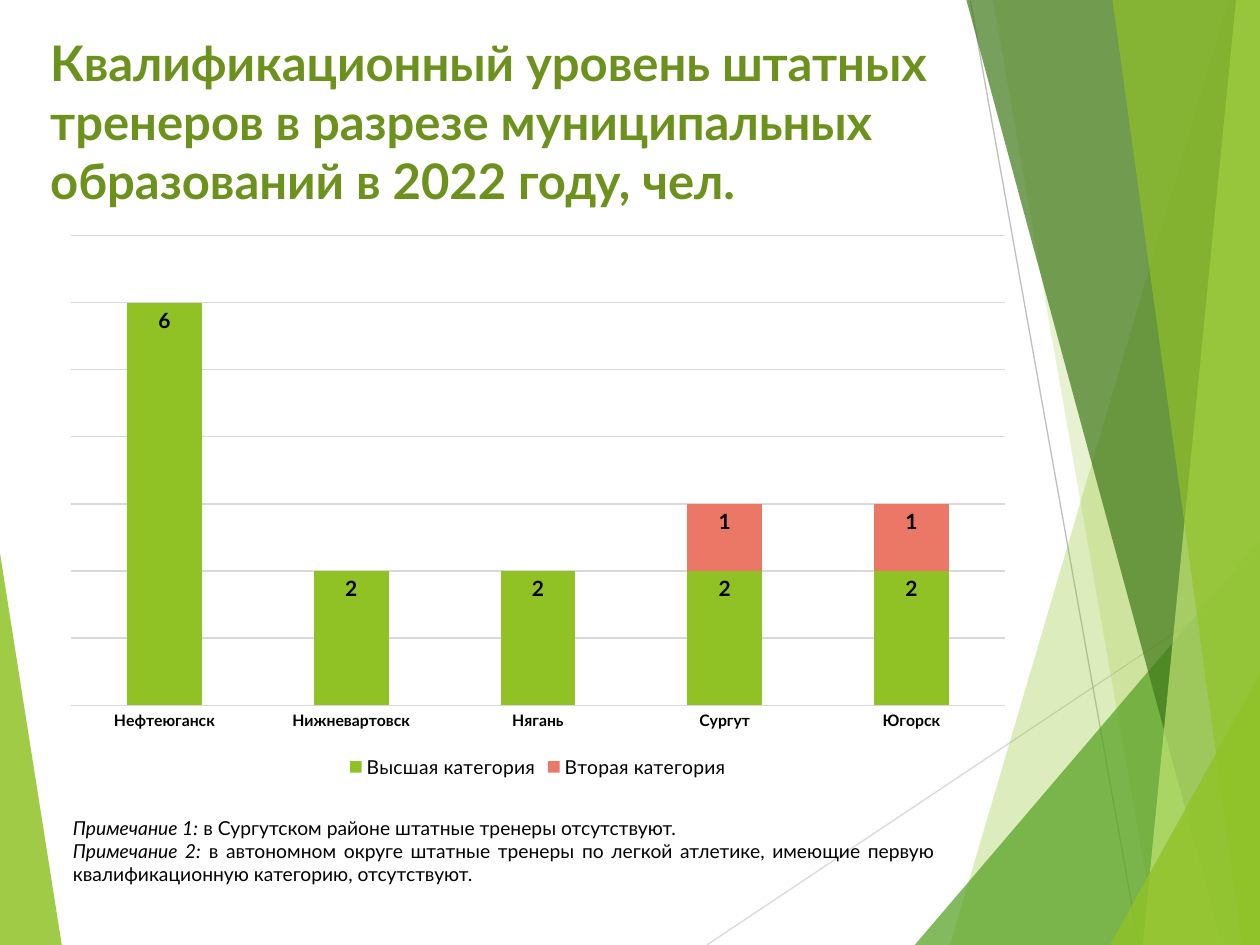
from dataclasses import dataclass

import pptx
import pptx.chart.data
import pptx.dml.color
import pptx.enum.chart
import pptx.enum.shapes
import pptx.enum.text
import pptx.oxml
import pptx.oxml.ns
import pptx.util

# The slide is a grid of 100 columns by 75 rows
COLUMNS, ROWS = 100, 75
CELL = pptx.util.Inches(0.1)


@dataclass(frozen=True)
class Theme:
    font: str = "Lato"
    title: str = "6C921D"
    text: str = "000000"
    lime: str = "90C226"
    green: str = "54A021"
    forest: str = "3F7819"
    pale: str = "C0E474"
    coral: str = "EB7766"
    light_gray: str = "D9D9D9"
    gray: str = "BFBFBF"
    hairline: float = 0.75
    title_size: int = 28
    chart_size: int = 10
    city_size: int = 9
    label_size: int = 12
    small_size: int = 11


@dataclass(frozen=True)
class Facet:
    corners: tuple[tuple[float, float], ...]
    color: str
    opacity: int


@dataclass(frozen=True)
class Ray:
    start: tuple[float, float]
    end: tuple[float, float]
    color: str


@dataclass(frozen=True)
class Box:
    column: float
    row: float
    width: float
    height: float

    def emu(self) -> tuple[int, ...]:
        return tuple(grid(v) for v in (self.column, self.row, self.width, self.height))


@dataclass(frozen=True)
class Category:
    name: str
    counts: tuple
    color: str


THEME = Theme()

LEFT_WEDGE = Facet(((0, 43.9), (4.9, ROWS), (0, ROWS)), THEME.lime, 85)
RAYS = (
    Ray((56.1, ROWS), (COLUMNS, 45.7), THEME.light_gray),
    Ray((77, 0), (90.4, ROWS), THEME.gray),
)


def right_facet(top: tuple[float, float], bottom: float, color: str, opacity: int) -> Facet:
    """A facet that fills everything from its slanted side to the right edge."""
    corners = (top, (bottom, ROWS), (COLUMNS, ROWS), (COLUMNS, top[1]))
    return Facet(corners, color, opacity)


RIGHT_FACETS = (
    right_facet((97.5, 0), 75.4, THEME.lime, 30),
    right_facet((78.8, 0), 91.9, THEME.lime, 20),
    right_facet((COLUMNS, 42.9), 72.6, THEME.green, 72),
    right_facet((76.7, 0), 97, THEME.forest, 70),
    right_facet((98.1, 0), 90.7, THEME.pale, 70),
    right_facet((88.3, 0), 98.6, THEME.lime, 65),
    right_facet((COLUMNS, 53.5), 88.1, THEME.lime, 80),
)

TITLE = "Квалификационный уровень штатных тренеров в разрезе муниципальных образований в 2022 году, чел."
CITIES = ("Нефтеюганск", "Нижневартовск", "Нягань", "Сургут", "Югорск")
CATEGORIES = (
    Category("Высшая категория", (6, 2, 2, 2, 2), THEME.lime),
    Category("Вторая категория", (None, None, None, 1, 1), THEME.coral),
)
NOTES = (
    ("Примечание 1:", " в Сургутском районе штатные тренеры отсутствуют."),
    ("Примечание 2:", " в автономном округе штатные тренеры по легкой атлетике, "
                      "имеющие первую квалификационную категорию, отсутствуют."),
)


def grid(cells: float) -> int:
    return round(cells * CELL)


def rgb(color: str) -> pptx.dml.color.RGBColor:
    return pptx.dml.color.RGBColor.from_string(color)


def style_font(font, size: float, color: str = THEME.text, bold: bool = False) -> None:
    font.name = THEME.font
    font.size = pptx.util.Pt(size)
    font.bold = bold
    font.color.rgb = rgb(color)


def style_line(line, color: str) -> None:
    line.color.rgb = rgb(color)
    line.width = pptx.util.Pt(THEME.hairline)


def draw_facet(slide, facet: Facet) -> None:
    first, *rest = [(grid(x), grid(y)) for x, y in facet.corners]
    builder = slide.shapes.build_freeform(*first)
    builder.add_line_segments(rest, close=True)
    shape = builder.convert_to_shape()
    shape.shadow.inherit = False
    shape.line.fill.background()
    shape.fill.solid()
    shape.fill.fore_color.rgb = rgb(facet.color)
    color = shape.fill._xPr.find(".//" + pptx.oxml.ns.qn("a:srgbClr"))
    alpha = pptx.oxml.parse_xml(
        f'<a:alpha {pptx.oxml.ns.nsdecls("a")} val="{facet.opacity * 1000}"/>')
    color.append(alpha)


def draw_ray(slide, ray: Ray) -> None:
    ends = [grid(v) for v in ray.start + ray.end]
    connector = slide.shapes.add_connector(pptx.enum.shapes.MSO_CONNECTOR.STRAIGHT, *ends)
    style_line(connector.line, ray.color)
    connector._element.spPr.append(
        pptx.oxml.parse_xml(f'<a:effectLst {pptx.oxml.ns.nsdecls("a")}/>'))


def add_text_frame(slide, box: Box):
    frame = slide.shapes.add_textbox(*box.emu()).text_frame
    frame.word_wrap = True
    return frame


def draw_title(slide, box: Box) -> None:
    frame = add_text_frame(slide, box)
    frame.text = TITLE
    style_font(frame.paragraphs[0].runs[0].font, THEME.title_size, THEME.title, bold=True)


def draw_notes(slide, box: Box) -> None:
    frame = add_text_frame(slide, box)
    frame.auto_size = pptx.enum.text.MSO_AUTO_SIZE.SHAPE_TO_FIT_TEXT
    for index, note in enumerate(NOTES):
        paragraph = frame.add_paragraph() if index else frame.paragraphs[0]
        paragraph.alignment = pptx.enum.text.PP_ALIGN.JUSTIFY
        for part, italic in zip(note, (True, False)):
            run = paragraph.add_run()
            run.text = part
            style_font(run.font, THEME.small_size)
            run.font.italic = italic


def place_plot(chart, x: float, y: float, w: float, h: float) -> None:
    """Fix the inner plot area, in shares of the chart."""
    sizes = "".join(f'<c:{k} val="{v}"/>' for k, v in zip("xywh", (x, y, w, h)))
    layout = pptx.oxml.parse_xml(
        f'<c:layout {pptx.oxml.ns.nsdecls("c")}><c:manualLayout>'
        '<c:layoutTarget val="inner"/><c:xMode val="edge"/><c:yMode val="edge"/>'
        f'{sizes}</c:manualLayout></c:layout>')
    area = chart._chartSpace.chart.plotArea
    for old in area.findall(pptx.oxml.ns.qn("c:layout")):
        area.remove(old)
    area.insert(0, layout)


def draw_chart(slide, box: Box) -> None:
    data = pptx.chart.data.CategoryChartData()
    data.categories = CITIES
    for category in CATEGORIES:
        data.add_series(category.name, category.counts)
    chart = slide.shapes.add_chart(
        pptx.enum.chart.XL_CHART_TYPE.COLUMN_STACKED, *box.emu(), data).chart
    chart.has_title = False
    style_font(chart.font, THEME.chart_size)
    place_plot(chart, 0.02, 0.02, 0.96, 0.84)

    # Axes and legend
    cities, counts = chart.category_axis, chart.value_axis
    cities.major_tick_mark = pptx.enum.chart.XL_TICK_MARK.NONE
    style_font(cities.tick_labels.font, THEME.city_size, bold=True)
    style_line(cities.format.line, THEME.light_gray)
    counts.minimum_scale, counts.maximum_scale, counts.major_unit = 0, 7, 1
    counts.has_major_gridlines = True
    style_line(counts.major_gridlines.format.line, THEME.light_gray)
    counts.visible = False
    chart.has_legend = True
    chart.legend.position = pptx.enum.chart.XL_LEGEND_POSITION.BOTTOM
    chart.legend.include_in_layout = False
    style_font(chart.legend.font, THEME.small_size)

    # Columns and their values
    plot = chart.plots[0]
    plot.gap_width, plot.overlap, plot.vary_by_categories = 150, 100, False
    for series, category in zip(plot.series, CATEGORIES):
        series.format.fill.solid()
        series.format.fill.fore_color.rgb = rgb(category.color)
        labels = series.data_labels
        labels.show_value = True
        labels.position = pptx.enum.chart.XL_LABEL_POSITION.INSIDE_END
        style_font(labels.font, THEME.label_size, bold=True)


def main() -> None:
    deck = pptx.Presentation()
    deck.slide_width, deck.slide_height = grid(COLUMNS), grid(ROWS)
    slide = deck.slides.add_slide(deck.slide_layouts[6])

    # Background facets
    draw_facet(slide, LEFT_WEDGE)
    for ray in RAYS:
        draw_ray(slide, ray)
    for facet in RIGHT_FACETS:
        draw_facet(slide, facet)

    # Content
    draw_title(slide, Box(3, 2.1, 76.9, 12.5))
    draw_chart(slide, Box(4.1, 17.8, 77.2, 44.4))
    draw_notes(slide, Box(4.8, 64.3, 70.4, 6.6))
    deck.save("out.pptx")


if __name__ == "__main__":
    main()
